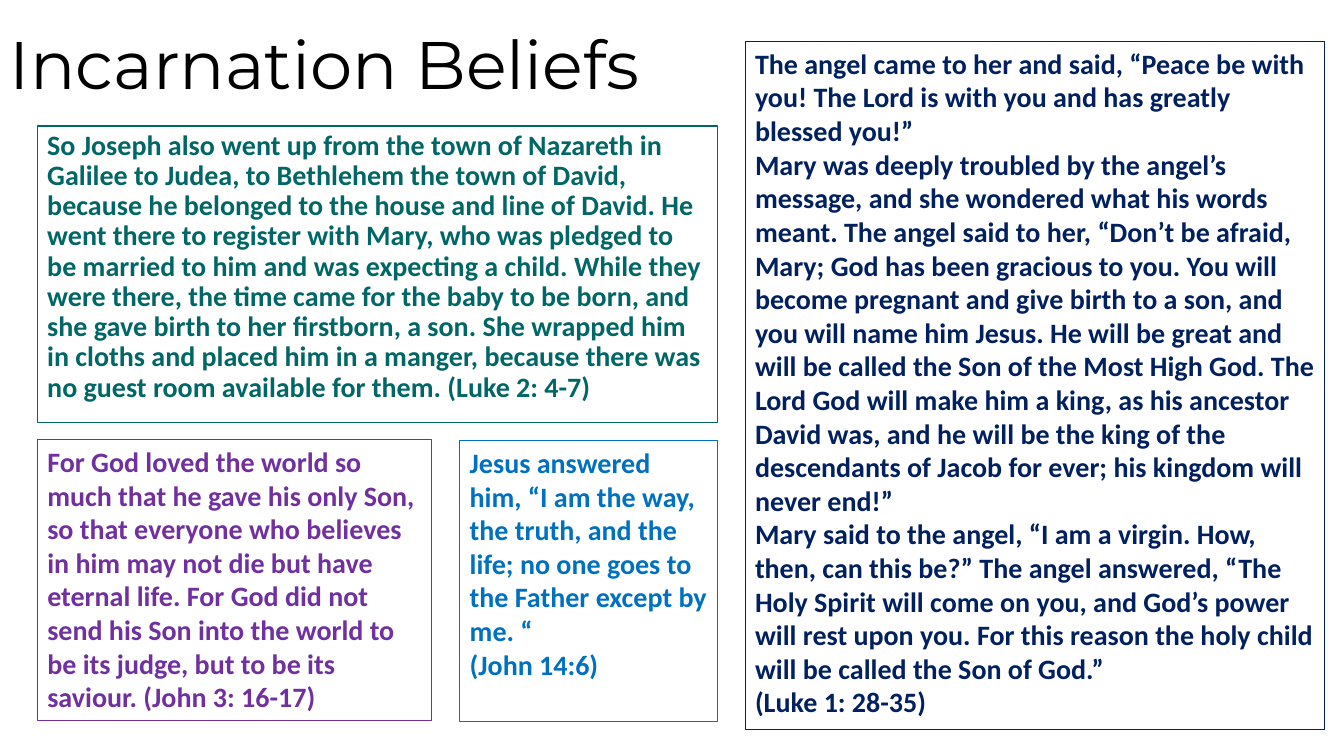
from dataclasses import dataclass

from pptx import Presentation
from pptx import util as u
from pptx.dml.color import RGBColor
from pptx.enum import shapes, text


@dataclass(frozen=True)
class Theme:
    """Colours, fonts and type sizes of the slide."""
    ink: str = "000000"
    teal: str = "006666"
    navy: str = "002060"
    plum: str = "7030A0"
    blue: str = "0070C0"
    head: str = "Montserrat"
    body: str = "Calibri"
    big: int = 48
    small: int = 20
    rule: float = 0.75
    tight: float = 0.9


T = Theme()
WIDE, HIGH = u.Inches(13.33), u.Inches(7.5)

BIRTH = [
    "So Joseph also went up from the town of Nazareth in Galilee to Judea, "
    "to Bethlehem the town of David, because he belonged to the house and line of David. "
    "He went there to register with Mary, who was pledged to be married to him and was "
    "expecting a child. While they were there, the time came for the baby to be born, and "
    "she gave birth to her firstborn, a son. She wrapped him in cloths and placed him in a "
    "manger, because there was no guest room available for them. (Luke 2: 4-7)",
]
ANGEL = [
    "The angel came to her and said, “Peace be with you! The Lord is with you and has "
    "greatly blessed you!”",
    "Mary was deeply troubled by the angel’s message, and she wondered what his words "
    "meant. The angel said to her, “Don’t be afraid, Mary; God has been gracious to you. "
    "You will become pregnant and give birth to a son, and you will name him Jesus. He will "
    "be great and will be called the Son of the Most High God. The Lord God will make him a "
    "king, as his ancestor David was, and he will be the king of the descendants of Jacob "
    "for ever; his kingdom will never end!”",
    "Mary said to the angel, “I am a virgin. How, then, can this be?” The angel answered, "
    "“The Holy Spirit will come on you, and God’s power will rest upon you. For this reason "
    "the holy child will be called the Son of God.”",
    "(Luke 1: 28-35)",
]
LOVE = [
    "For God loved the world so much that he gave his only Son, so that everyone who "
    "believes in him may not die but have eternal life. For God did not send his Son into "
    "the world to be its judge, but to be its saviour. (John 3: 16-17)",
]
WAY = [
    "Jesus answered him, “I am the way, the truth, and the life; no one goes to the Father "
    "except by me. “",
    "(John 14:6)",
]


def place(x, y, w, h):
    """Turn percentages of the slide into a left, top, width, height box."""
    return [round(WIDE * x / 100), round(HIGH * y / 100),
            round(WIDE * w / 100), round(HIGH * h / 100)]


def write(frame, lines, face, size, tint, bold=False, space=None):
    """Fill a text frame with left-aligned paragraphs in one style."""
    frame.word_wrap = True
    frame.text = "\n".join(lines)
    for para in frame.paragraphs:
        para.alignment = text.PP_ALIGN.LEFT
        para.line_spacing = space
        font = para.font
        font.name, font.size, font.bold = face, u.Pt(size), bold
        font.color.rgb = RGBColor.from_string(tint)


def title(slide, box, words):
    """Set the slide heading in its box."""
    frame = slide.shapes.add_textbox(*box).text_frame
    frame.vertical_anchor = text.MSO_ANCHOR.MIDDLE
    write(frame, [words], T.head, T.big, T.ink, space=T.tight)


def quote(slide, box, lines, tint, space=None):
    """Draw an outlined box with a passage in the same colour."""
    panel = slide.shapes.add_shape(shapes.MSO_SHAPE.RECTANGLE, *box)
    panel.shadow.inherit = False
    panel.fill.background()
    panel.line.color.rgb = RGBColor.from_string(tint)
    panel.line.width = u.Pt(T.rule)
    panel.text_frame.vertical_anchor = text.MSO_ANCHOR.TOP
    write(panel.text_frame, lines, T.body, T.small, tint, True, space)


def main():
    """Build and save the slide."""
    deck = Presentation()
    deck.slide_width, deck.slide_height = WIDE, HIGH
    slide = deck.slides.add_slide(deck.slide_layouts[6])
    title(slide, place(0, 1.2, 86.27, 15.47), "Incarnation Beliefs")
    quote(slide, place(2.78, 16.67, 50.64, 39.2), BIRTH, T.teal, T.tight)
    quote(slide, place(55.44, 5.47, 43.14, 91.07), ANGEL, T.navy)
    quote(slide, place(2.78, 58.13, 29.33, 37.2), LOVE, T.plum)
    quote(slide, place(34.21, 58.27, 19.2, 37.2), WAY, T.blue)
    deck.save("out.pptx")


if __name__ == "__main__":
    main()
